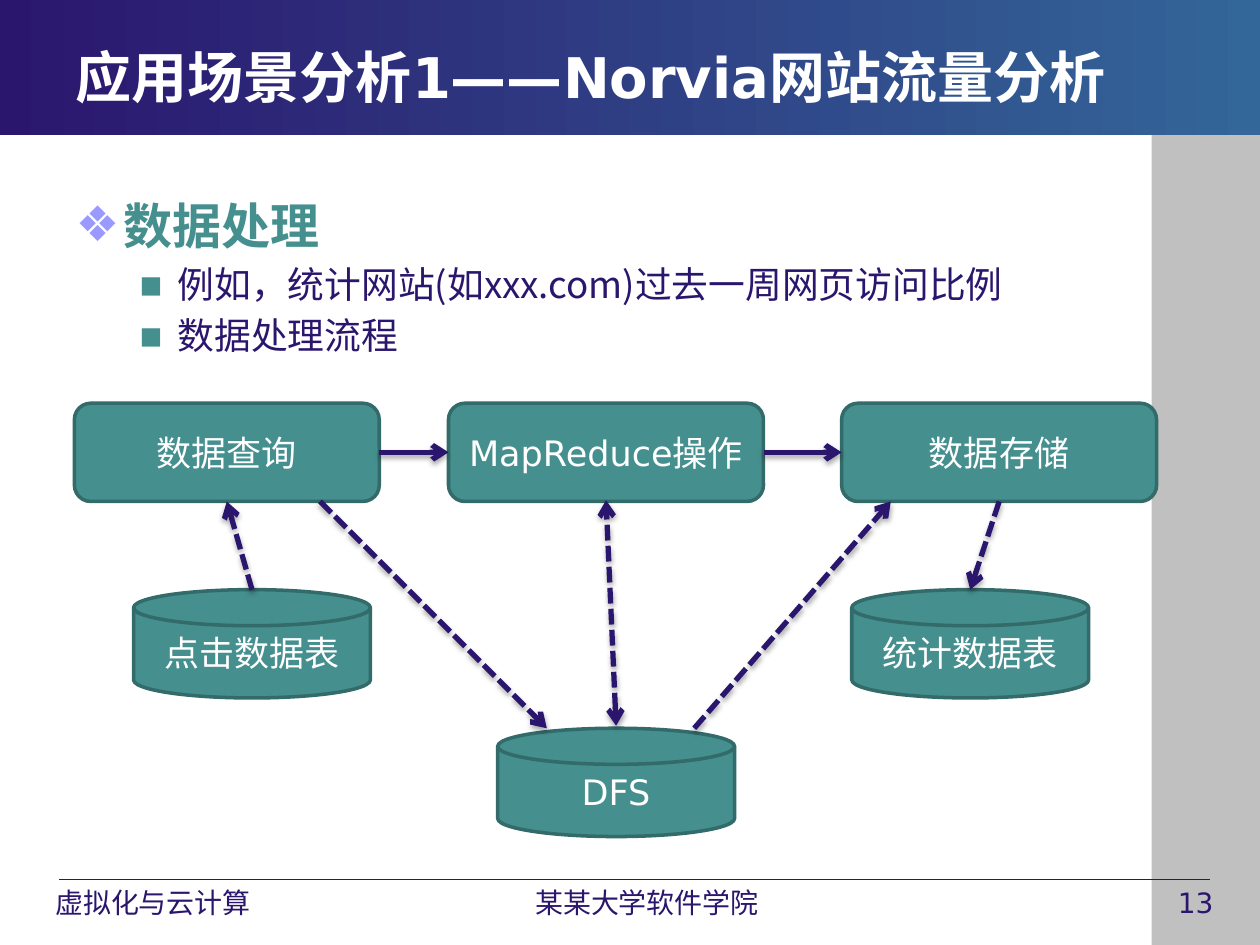
from lxml.etree import SubElement
from pptx import Presentation
from pptx.dml.color import RGBColor
from pptx.enum.dml import MSO_LINE
from pptx.enum.shapes import MSO_CONNECTOR, MSO_SHAPE
from pptx.enum.text import MSO_ANCHOR, MSO_AUTO_SIZE, PP_ALIGN
from pptx.oxml.ns import qn
from pptx.util import Inches, Pt

NAVY = RGBColor(0x2B, 0x16, 0x6E)
BLUE = RGBColor(0x33, 0x66, 0x99)
TEAL = RGBColor(0x45, 0x8F, 0x8F)
DARK_TEAL = RGBColor(0x33, 0x6A, 0x6A)
LAVENDER = RGBColor(0x99, 0x99, 0xFF)
GRAY = RGBColor(0xC0, 0xC0, 0xC0)
WHITE = RGBColor(0xFF, 0xFF, 0xFF)
MAIN_FONT = "DejaVu Sans"
CJK_FONT = "Noto Sans CJK SC"

BOX_TOP, BOX_HEIGHT = 3.2, 0.78
BOX_BOTTOM = BOX_TOP + BOX_HEIGHT
BOX_MIDDLE = BOX_TOP + BOX_HEIGHT / 2
DISK_WIDTH, DISK_HEIGHT = 1.88, 0.86
TABLE_TOP, STORE_TOP = 4.68, 5.78


def write_text(paragraph, text, size, color, font=MAIN_FONT, bold=False, align=PP_ALIGN.LEFT):
    paragraph.alignment = align
    run = paragraph.add_run()
    run.text = text
    run.font.size = Pt(size)
    run.font.color.rgb = color
    run.font.bold = bold
    run.font.name = font
    SubElement(run.font._element, qn("a:ea"), typeface=font)


def add_bullet(paragraph, character, color, margin, indent):
    properties = paragraph._p.get_or_add_pPr()
    properties.set("marL", str(Inches(margin)))
    properties.set("indent", str(Inches(-indent)))
    bullet_color = SubElement(properties, qn("a:buClr"))
    SubElement(bullet_color, qn("a:srgbClr"), val=str(color))
    SubElement(properties, qn("a:buFont"), typeface=MAIN_FONT)
    SubElement(properties, qn("a:buChar"), char=character)


def place_placeholder(shape, left, top, width, height, anchor):
    shape.left, shape.top = Inches(left), Inches(top)
    shape.width, shape.height = Inches(width), Inches(height)
    shape.text_frame.auto_size = MSO_AUTO_SIZE.NONE
    shape.text_frame.vertical_anchor = anchor
    shape.element.getparent().append(shape.element)
    return shape.text_frame


def add_band(slide, left, top, width, height):
    shape = slide.shapes.add_shape(
        MSO_SHAPE.RECTANGLE, Inches(left), Inches(top), Inches(width), Inches(height)
    )
    shape.shadow.inherit = False
    shape.line.fill.background()
    return shape


def add_node(slide, kind, text, left, top, width, height):
    shape = slide.shapes.add_shape(kind, Inches(left), Inches(top), Inches(width), Inches(height))
    shape.shadow.inherit = False
    shape.fill.solid()
    shape.fill.fore_color.rgb = TEAL
    shape.line.color.rgb = DARK_TEAL
    shape.line.width = Pt(2)
    shape.text_frame.vertical_anchor = MSO_ANCHOR.MIDDLE
    write_text(shape.text_frame.paragraphs[0], text, 20, WHITE, align=PP_ALIGN.CENTER)


def add_line(slide, start, end, width):
    line = slide.shapes.add_connector(
        MSO_CONNECTOR.STRAIGHT, *(Inches(value) for value in start + end)
    )
    line.line.color.rgb = NAVY
    line.line.width = Pt(width)
    effects = SubElement(line.element.spPr, qn("a:effectLst"))
    return line, effects


def add_arrow(slide, start, end, dashed=True, both_ends=False):
    arrow, effects = add_line(slide, start, end, 3)
    if dashed:
        arrow.line.dash_style = MSO_LINE.SQUARE_DOT
    outline = arrow.line._get_or_add_ln()
    if both_ends:
        SubElement(outline, qn("a:headEnd"), type="arrow")
    SubElement(outline, qn("a:tailEnd"), type="arrow")
    shadow = SubElement(
        effects, qn("a:outerShdw"), blurRad=str(Pt(3.1)), dist=str(Pt(1.8)),
        dir="5400000", rotWithShape="0",
    )
    shadow_color = SubElement(shadow, qn("a:srgbClr"), val="000000")
    SubElement(shadow_color, qn("a:alpha"), val="35000")


def add_footer(slide, text, left, width, align=PP_ALIGN.CENTER):
    box = slide.shapes.add_textbox(Inches(left), Inches(6.98), Inches(width), Inches(0.35))
    box.text_frame.word_wrap = True
    write_text(box.text_frame.paragraphs[0], text, 16, NAVY, align=align)


def add_background(slide):
    side_band = add_band(slide, 9.14, 1.07, 0.86, 6.43)
    side_band.fill.solid()
    side_band.fill.fore_color.rgb = GRAY
    add_line(slide, (0.47, 6.98), (9.6, 6.98), 0.75)
    banner = add_band(slide, 0, 0, 10, 1.07)
    banner.fill.gradient()
    banner.fill.gradient_angle = 0
    for stop, color in zip(banner.fill.gradient_stops, (NAVY, BLUE)):
        stop.color.rgb = color
    add_footer(slide, "13", 9.25, 0.71, align=PP_ALIGN.LEFT)
    add_footer(slide, "虚拟化与云计算 ", 0.28, 1.94)
    add_footer(slide, "某某大学软件学院", 4.01, 2.25)


def add_content(slide):
    title = place_placeholder(slide.shapes.title, 0.5, 0.29, 9.3, 0.62, MSO_ANCHOR.MIDDLE)
    write_text(title.paragraphs[0], "应用场景分析1——Norvia网站流量分析", 32, WHITE, bold=True)

    body = place_placeholder(slide.placeholders[1], 0.5, 1.5, 9, 5.42, MSO_ANCHOR.TOP)
    heading = body.paragraphs[0]
    write_text(heading, "数据处理", 28, TEAL, bold=True)
    add_bullet(heading, "❖", LAVENDER, 0.38, 0.38)
    for text in ("例如，统计网站(如xxx.com)过去一周网页访问比例", "数据处理流程"):
        paragraph = body.add_paragraph()
        paragraph.level = 1
        write_text(paragraph, text, 21, NAVY, font=CJK_FONT)
        add_bullet(paragraph, "▪", TEAL, 0.81, 0.31)


def add_diagram(slide):
    for text, left, width in (
        ("数据查询", 0.59, 2.42),
        ("MapReduce操作", 3.56, 2.5),
        ("数据存储", 6.68, 2.5),
    ):
        add_node(slide, MSO_SHAPE.ROUNDED_RECTANGLE, text, left, BOX_TOP, width, BOX_HEIGHT)
    for text, left, top in (
        ("点击数据表", 1.06, TABLE_TOP),
        ("统计数据表", 6.76, TABLE_TOP),
        ("DFS", 3.95, STORE_TOP),
    ):
        add_node(slide, MSO_SHAPE.FLOWCHART_MAGNETIC_DISK, text, left, top, DISK_WIDTH, DISK_HEIGHT)

    add_arrow(slide, (2, TABLE_TOP), (1.8, BOX_BOTTOM))
    add_arrow(slide, (2.54, BOX_BOTTOM), (4.34, STORE_TOP))
    add_arrow(slide, (4.89, 5.76), (4.81, 3.97), both_ends=True)
    add_arrow(slide, (5.51, STORE_TOP), (7.07, BOX_BOTTOM))
    add_arrow(slide, (7.93, BOX_BOTTOM), (7.7, TABLE_TOP))
    for start, end in ((3.01, 3.56), (6.06, 6.68)):
        add_arrow(slide, (start, BOX_MIDDLE), (end, BOX_MIDDLE), dashed=False)


def main():
    presentation = Presentation()
    presentation.slide_width = Inches(10)
    presentation.slide_height = Inches(7.5)
    slide = presentation.slides.add_slide(presentation.slide_layouts[1])
    add_background(slide)
    add_content(slide)
    add_diagram(slide)
    presentation.save("out.pptx")


if __name__ == "__main__":
    main()
